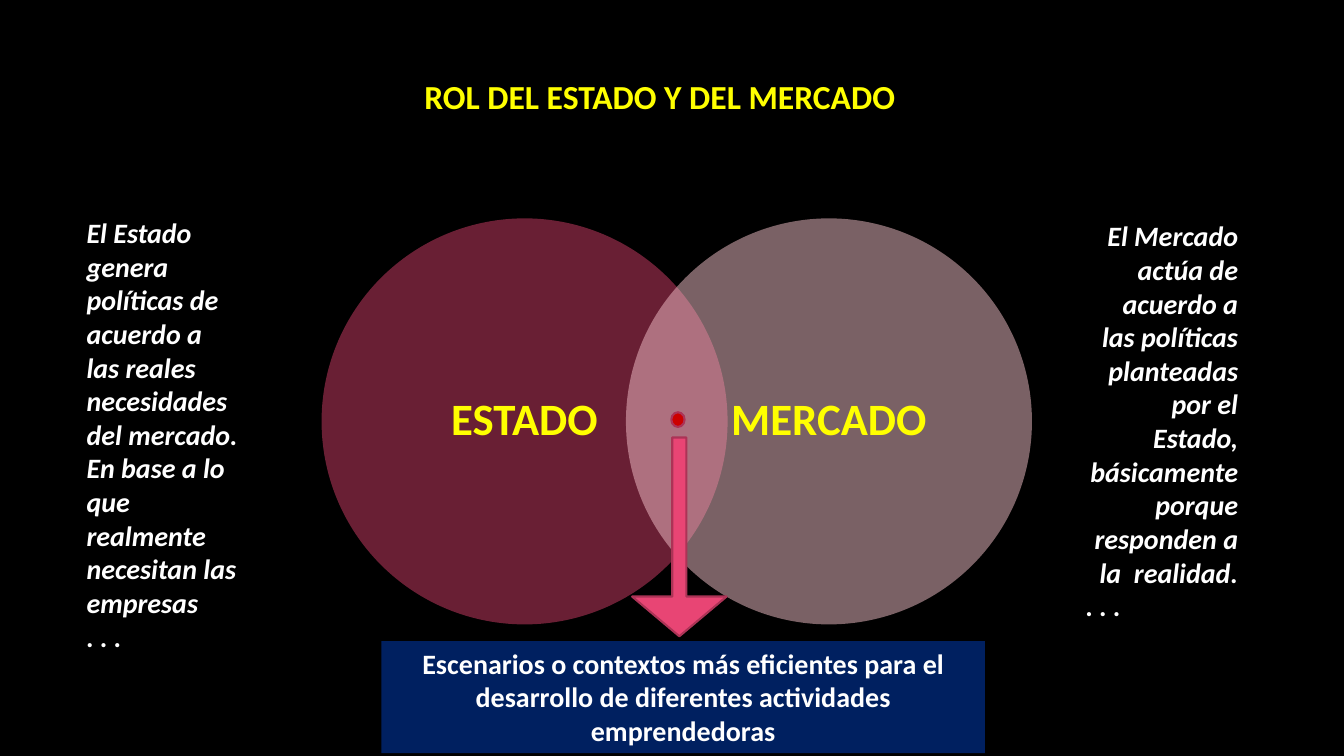
"""Build the slide on the roles of the state and the market."""
import pptx
import pptx.util
import pptx.dml.color
import pptx.enum.shapes
import pptx.enum.text
import pptx.oxml
import pptx.oxml.ns

Pt = pptx.util.Pt
RGBColor = pptx.dml.color.RGBColor
SHAPE = pptx.enum.shapes.MSO_SHAPE
ALIGN = pptx.enum.text.PP_ALIGN
ANCHOR = pptx.enum.text.MSO_ANCHOR
AUTO_SIZE = pptx.enum.text.MSO_AUTO_SIZE

BLACK = RGBColor(0x00, 0x00, 0x00)
WHITE = RGBColor(0xFF, 0xFF, 0xFF)
YELLOW = RGBColor(0xFF, 0xFF, 0x00)
CRIMSON = RGBColor(0xD3, 0x3F, 0x69)
ROSE = RGBColor(0xF4, 0xC2, 0xCA)
RED = RGBColor(0xCC, 0x00, 0x00)
PINK = RGBColor(0xE8, 0x45, 0x74)
OUTLINE = RGBColor(0xAC, 0x33, 0x56)
NAVY = RGBColor(0x00, 0x20, 0x60)


def write(frame, lines, size, color, italic=False):
    frame.word_wrap = True
    frame.auto_size = AUTO_SIZE.NONE
    frame.text = "\n".join(text for text, _ in lines)
    for paragraph, (_, align) in zip(frame.paragraphs, lines):
        paragraph.alignment = align
        font = paragraph.font
        font.name, font.size, font.bold, font.italic = "Calibri", Pt(size), True, italic
        font.color.rgb = color


def add_solid(kind, box, fill, line=None):
    solid = slide.shapes.add_shape(kind, *map(Pt, box))
    solid.shadow.inherit = False
    solid.fill.solid()
    solid.fill.fore_color.rgb = fill
    if line is None:
        solid.line.fill.background()
    else:
        solid.line.color.rgb = line
        solid.line.width = Pt(1.5)
    return solid


deck = pptx.Presentation()
deck.slide_width, deck.slide_height = Pt(960), Pt(540)
slide = deck.slides.add_slide(deck.slide_layouts[5])
slide.background.fill.solid()
slide.background.fill.fore_color.rgb = BLACK

title = slide.shapes.title
title.left, title.top, title.width, title.height = Pt(250.5), Pt(50.5), Pt(441.5), Pt(36)
write(title.text_frame, [("ROL DEL ESTADO Y DEL MERCADO", ALIGN.CENTER)], 24, YELLOW)
title.text_frame.vertical_anchor = ANCHOR.TOP

for role, left, color in [("ESTADO", 229.7, CRIMSON), ("MERCADO", 447.1, ROSE)]:
    circle = add_solid(SHAPE.OVAL, (left, 156, 290, 290), color)
    tint = circle.fill._xPr.find(".//" + pptx.oxml.ns.qn("a:srgbClr"))
    tint.append(pptx.oxml.parse_xml(f'<a:alpha {pptx.oxml.ns.nsdecls("a")} val="50000"/>'))
    frame = circle.text_frame
    write(frame, [(role, ALIGN.CENTER)], 32, YELLOW)
    frame.vertical_anchor = ANCHOR.MIDDLE
    frame.margin_left = frame.margin_right = Pt(16)
    frame.margin_top = frame.margin_bottom = Pt(3)
    frame.paragraphs[0].line_spacing = 0.9

add_solid(SHAPE.OVAL, (479.5, 294.5, 9.5, 10.5), RED, OUTLINE)
arrow = add_solid(SHAPE.DOWN_ARROW, (451.5, 312.5, 67.5, 142), PINK, OUTLINE)
arrow.adjustments[0], arrow.adjustments[1] = 0.15, 0.42

outcome = add_solid(SHAPE.RECTANGLE, (272.5, 458, 431, 80), NAVY)
write(
    outcome.text_frame,
    [("Escenarios o contextos más eficientes para el desarrollo de diferentes "
      "actividades emprendedoras", ALIGN.CENTER)],
    20, WHITE,
)
outcome.text_frame.vertical_anchor = ANCHOR.TOP

explanations = [
    (54.7, 150.5, 322.5, ALIGN.LEFT,
     "El Estado genera políticas de acuerdo a las reales necesidades del mercado. "
     "En base a lo que realmente necesitan las empresas"),
    (768.5, 152.8, 298, ALIGN.RIGHT,
     "El Mercado actúa de acuerdo a las políticas planteadas por el Estado, "
     "básicamente porque responden a la  realidad."),
]
for left, top, height, align, text in explanations:
    explanation = slide.shapes.add_textbox(Pt(left), Pt(top), Pt(123), Pt(height))
    write(explanation.text_frame, [(text, align), (". . .", ALIGN.LEFT)], 20, WHITE, italic=True)

deck.save("out.pptx")
